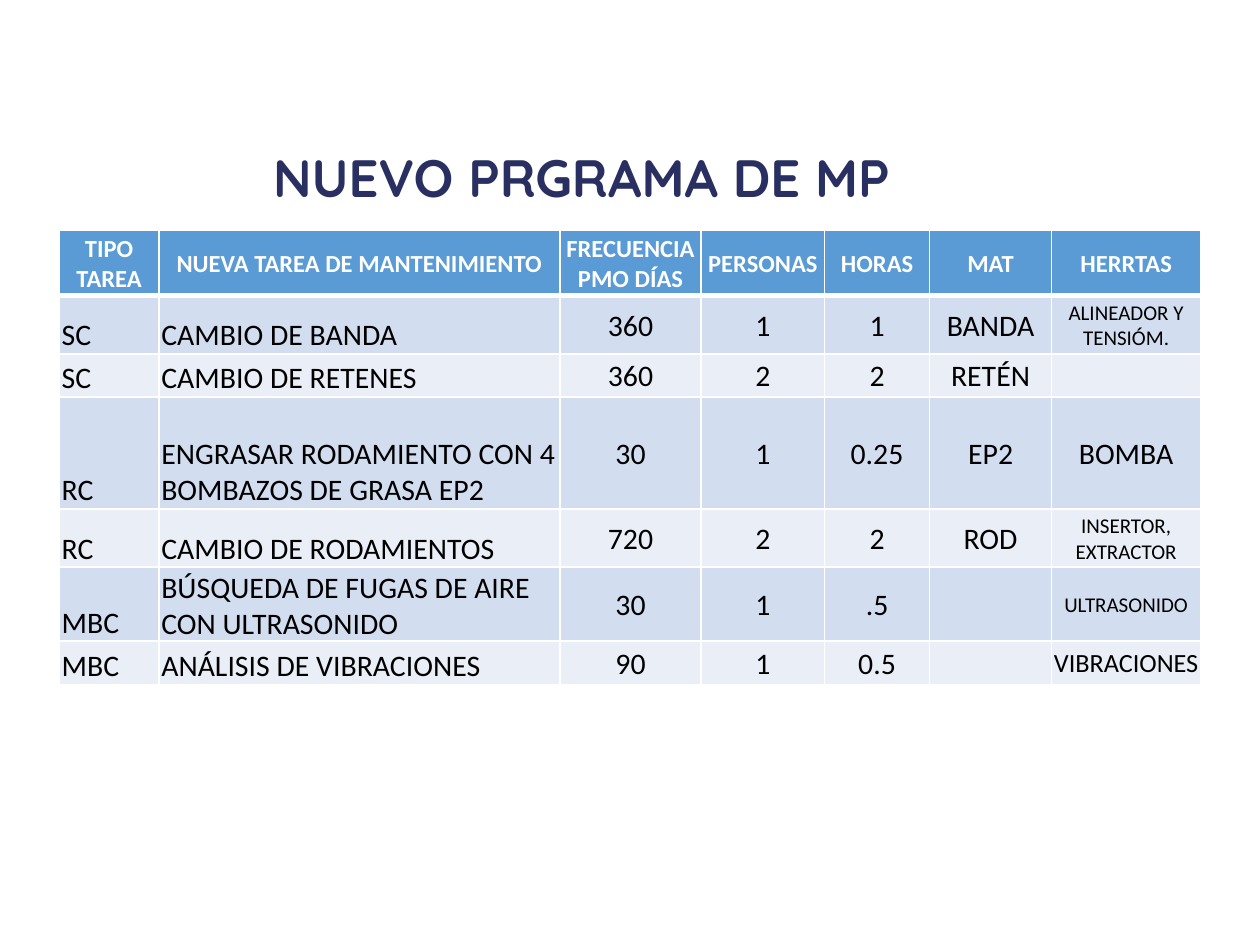
from lxml import etree
from pptx import Presentation
from pptx import util as u
from pptx.dml.color import RGBColor
from pptx.enum import text
from pptx.oxml.ns import qn

COLORS = {"title": "292F60", "header": "5B9BD5", "odd": "D2DEEF",
          "even": "EAEFF7", "white": "FFFFFF", "black": "000000"}
COLUMNS = [0.79, 3.18, 1.12, 0.98, 0.83, 0.97, 1.18]
ROWS = [0.51, 0.46, 0.34, 0.88, 0.46, 0.57, 0.34]
TASKS = [
    ["TIPO TAREA", "NUEVA TAREA DE MANTENIMIENTO", "FRECUENCIA PMO DÍAS",
     "PERSONAS", "HORAS", "MAT", "HERRTAS"],
    ["SC", "CAMBIO DE BANDA", "360", "1", "1", "BANDA", "ALINEADOR Y TENSIÓM."],
    ["SC", "CAMBIO DE RETENES", "360", "2", "2", "RETÉN", ""],
    ["RC", "ENGRASAR RODAMIENTO CON 4 BOMBAZOS DE GRASA EP2", "30", "1", "0.25",
     "EP2", "BOMBA"],
    ["RC", "CAMBIO DE RODAMIENTOS", "720", "2", "2", "ROD", "INSERTOR, EXTRACTOR"],
    ["MBC", "BÚSQUEDA DE FUGAS DE AIRE CON ULTRASONIDO", "30", "1", ".5", "",
     "ULTRASONIDO"],
    ["MBC", "ANÁLISIS DE VIBRACIONES", "90", "1", "0.5", "", "VIBRACIONES"],
]
TOOL_COLUMN = len(COLUMNS) - 1
TOOL_SIZES = {"ALINEADOR Y TENSIÓM.": 12, "INSERTOR, EXTRACTOR": 12,
              "ULTRASONIDO": 12, "VIBRACIONES": 15}


def format_runs(paragraph, font, size, color, bold):
    """Give every run of a paragraph its font."""
    for run in paragraph.runs:
        run.font.name = font
        run.font.size = u.Pt(size)
        run.font.bold = bold
        run.font.color.rgb = RGBColor.from_string(COLORS[color])


def add_title(slide, box):
    """Place the slide title in the box."""
    frame = slide.shapes.add_textbox(*box).text_frame
    frame.word_wrap = True
    frame.vertical_anchor = text.MSO_ANCHOR.MIDDLE
    frame.text = "NUEVO PRGRAMA DE MP"
    paragraph = frame.paragraphs[0]
    paragraph.line_spacing = 0.9
    format_runs(paragraph, "Quicksand", 30, "title", True)


def add_borders(cell, row):
    """Draw white cell borders, thicker beneath the header row."""
    properties = cell._tc.get_or_add_tcPr()
    widths = {"lnL": 1, "lnR": 1, "lnT": 3 if row == 1 else 1, "lnB": 3 if row == 0 else 1}
    for index, (side, width) in enumerate(widths.items()):
        line = etree.Element(qn(f"a:{side}"), w=str(u.Pt(width)))
        fill = etree.SubElement(line, qn("a:solidFill"))
        etree.SubElement(fill, qn("a:srgbClr"), val=COLORS["white"])
        properties.insert(index, line)


def fill_cell(cell, row, column, content):
    """Write and style one cell according to its row and column."""
    header = row == 0
    left = not header and column < 2
    cell.margin_left = cell.margin_right = u.Inches(0 if column == TOOL_COLUMN else 0.02)
    cell.margin_top = u.Inches(0.02)
    cell.margin_bottom = 0
    cell.vertical_anchor = text.MSO_ANCHOR.BOTTOM if left else text.MSO_ANCHOR.MIDDLE
    cell.fill.solid()
    band = "header" if header else "odd" if row % 2 else "even"
    cell.fill.fore_color.rgb = RGBColor.from_string(COLORS[band])
    add_borders(cell, row)
    cell.text = content
    paragraph = cell.text_frame.paragraphs[0]
    paragraph.alignment = text.PP_ALIGN.LEFT if left else text.PP_ALIGN.CENTER
    size = 14 if header else TOOL_SIZES.get(content, 17)
    format_runs(paragraph, "Calibri", size, "white" if header else "black", header)


def add_task_table(slide, box):
    """Place the maintenance table, sharing the box among columns and rows."""
    table = slide.shapes.add_table(len(ROWS), len(COLUMNS), *box).table
    for column, share in zip(table.columns, COLUMNS):
        column.width = int(box[2] * share / sum(COLUMNS))
    for row, share in zip(table.rows, ROWS):
        row.height = int(box[3] * share / sum(ROWS))
    for row, task in enumerate(TASKS):
        for column, content in enumerate(task):
            fill_cell(table.cell(row, column), row, column, content)


def main():
    """Build and save the presentation."""
    presentation = Presentation()
    presentation.slide_width, presentation.slide_height = u.Inches(10), u.Inches(7.5)
    slide = presentation.slides.add_slide(presentation.slide_layouts[6])
    add_title(slide, [u.Inches(side) for side in (2.07, 1.04, 7.46, 0.79)])
    add_task_table(slide, [u.Inches(side) for side in (0.47, 1.83, 9.06, 3.59)])
    presentation.save("out.pptx")


if __name__ == "__main__":
    main()
